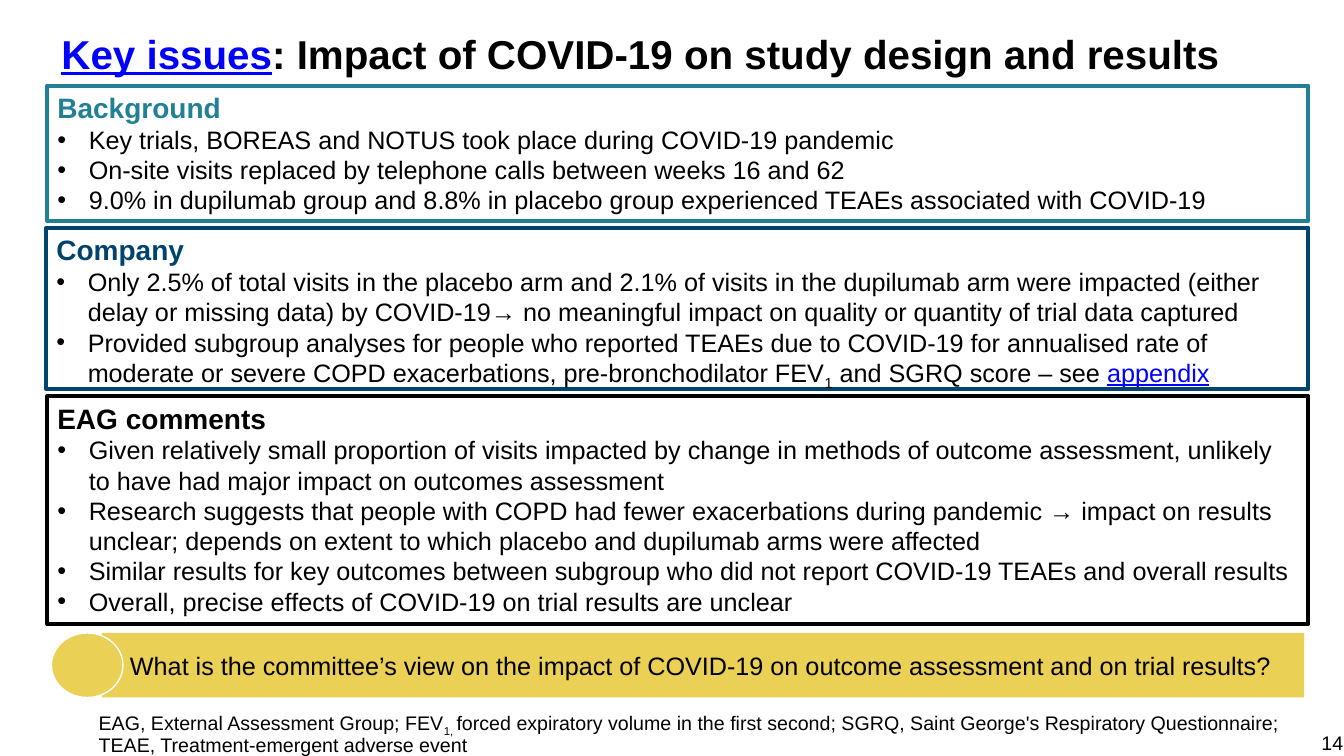
from dataclasses import dataclass

from lxml.etree import SubElement
from pptx import Presentation
from pptx.dml.color import RGBColor
from pptx.enum.shapes import MSO_SHAPE
from pptx.enum.text import MSO_ANCHOR, MSO_AUTO_SIZE, PP_ALIGN
from pptx.oxml.ns import qn
from pptx.shapes.autoshape import Shape
from pptx.slide import Slide
from pptx.text.text import Font, TextFrame, _Paragraph
from pptx.util import Pt

COLORS = {
    "teal": "228096",
    "navy": "00436C",
    "black": "000000",
    "link": "0000FF",
    "yellow": "EAD054",
    "white": "FFFFFF",
}
PANEL_RIGHT = 934.56
BULLET_INDENT = 22.5


@dataclass
class Span:
    text: str
    link: bool = False
    subscript: bool = False


@dataclass
class Panel:
    heading: str
    color: str
    left: float
    top: float
    height: float
    bullets: list[list[Span]]


PANELS = [
    Panel("Background", "teal", 33.84, 61.2, 96.48, [
        [Span("Key trials, BOREAS and NOTUS took place during COVID-19 pandemic")],
        [Span("On-site visits replaced by telephone calls between weeks 16 and 62")],
        [Span("9.0% in dupilumab group and 8.8% in placebo group experienced TEAEs "
              "associated with COVID-19")],
    ]),
    Panel("Company", "navy", 33.12, 162.72, 115.2, [
        [Span("Only 2.5% of total visits in the placebo arm and 2.1% of visits in the "
              "dupilumab arm were impacted (either delay or missing data) by COVID-19→ "
              "no meaningful impact on quality or quantity of trial data captured")],
        [Span("Provided subgroup analyses for people who reported TEAEs due to COVID-19 "
              "for annualised rate of moderate or severe COPD exacerbations, "
              "pre-bronchodilator FEV"),
         Span("1", subscript=True),
         Span(" and SGRQ score – see "),
         Span("appendix", link=True)],
    ]),
    Panel("EAG comments", "black", 33.84, 282.96, 162.72, [
        [Span("Given relatively small proportion of visits impacted by change in methods of "
              "outcome assessment, unlikely to have had major impact on outcomes assessment")],
        [Span("Research suggests that people with COPD had fewer exacerbations during "
              "pandemic → impact on results unclear; depends on extent to which placebo "
              "and dupilumab arms were affected")],
        [Span("Similar results for key outcomes between subgroup who did not report "
              "COVID-19 TEAEs and overall results")],
        [Span("Overall, precise effects of COVID-19 on trial results are unclear")],
    ]),
]


def rgb(name: str) -> RGBColor:
    return RGBColor.from_string(COLORS[name])


def style_font(font: Font, size: float, color: str = "black", bold: bool = False) -> None:
    font.name = "Arial"
    font.size = Pt(size)
    font.bold = bold
    font.color.rgb = rgb(color)


def write(para: _Paragraph, spans: list[Span], size: float, color: str = "black",
          bold: bool = False) -> None:
    style_font(para.font, size, color, bold)
    para.alignment = PP_ALIGN.LEFT
    for span in spans:
        run = para.add_run()
        run.text = span.text
        run.font.color.rgb = rgb("link" if span.link else color)
        if span.link:
            run.font.underline = True
        if span.subscript:
            run.font._element.set("baseline", "-25000")


def add_bullet(para: _Paragraph) -> None:
    properties = para._p.get_or_add_pPr()
    properties.set("marL", str(Pt(BULLET_INDENT)))
    properties.set("indent", str(-Pt(BULLET_INDENT)))
    SubElement(properties, qn("a:buFont"), typeface="Arial")
    SubElement(properties, qn("a:buChar"), char="•")


def add_box(page: Slide, kind: MSO_SHAPE, left: float, top: float, width: float, height: float,
            fill: str | None = None, line: str | None = None, line_width: float = 1) -> Shape:
    box = page.shapes.add_shape(kind, Pt(left), Pt(top), Pt(width), Pt(height))
    box.shadow.inherit = False
    if fill:
        box.fill.solid()
        box.fill.fore_color.rgb = rgb(fill)
    else:
        box.fill.background()
    if line:
        box.line.color.rgb = rgb(line)
        box.line.width = Pt(line_width)
    else:
        box.line.fill.background()
    return box


def add_text(page: Slide, left: float, top: float, width: float, height: float) -> TextFrame:
    frame = page.shapes.add_textbox(Pt(left), Pt(top), Pt(width), Pt(height)).text_frame
    frame.word_wrap = True
    return frame


def add_title(page: Slide) -> None:
    title = page.shapes.title
    title.left, title.top, title.width, title.height = Pt(36.72), Pt(20.88), Pt(885.6), Pt(46.8)
    frame = title.text_frame
    frame.auto_size = MSO_AUTO_SIZE.NONE
    frame.vertical_anchor = MSO_ANCHOR.TOP
    para = frame.paragraphs[0]
    para.line_spacing = 0.9
    write(para, [Span("Key issues", link=True),
                 Span(": Impact of COVID-19 on study design and results")], 28.8, bold=True)


def add_panel(page: Slide, panel: Panel) -> None:
    box = add_box(page, MSO_SHAPE.RECTANGLE, panel.left, panel.top, PANEL_RIGHT - panel.left,
                  panel.height, line=panel.color, line_width=3)
    frame = box.text_frame
    frame.vertical_anchor = MSO_ANCHOR.TOP
    write(frame.paragraphs[0], [Span(panel.heading)], 20, panel.color, bold=True)
    for spans in panel.bullets:
        para = frame.add_paragraph()
        add_bullet(para)
        write(para, spans, 18)


def add_question(page: Slide) -> None:
    top, height = 452.16, 46.08
    bar = add_box(page, MSO_SHAPE.RECTANGLE, 72.72, top, 858.96, height, fill="yellow")
    frame = bar.text_frame
    frame.margin_left = Pt(20.16)
    frame.vertical_anchor = MSO_ANCHOR.MIDDLE
    write(frame.paragraphs[0], [Span("What is the committee’s view on the impact of COVID-19 on "
                                     "outcome assessment and on trial results?")], 18)
    add_box(page, MSO_SHAPE.OVAL, 36.72, top, 51.12, height, fill="yellow", line="white")


def add_footer(page: Slide) -> None:
    para = add_text(page, 63.36, 504.72, 867.6, 35.28).paragraphs[0]
    para.line_spacing = 0.9
    write(para, [
        Span("EAG, External Assessment Group; FEV"),
        Span("1, ", subscript=True),
        Span("forced expiratory volume in the first second; SGRQ, Saint George's Respiratory "
             "Questionnaire; TEAE, Treatment-emergent adverse event"),
    ], 14)
    frame = add_text(page, 929.52, 518.4, 30, 21.6)
    frame.margin_right = 0
    number = frame.paragraphs[0]
    write(number, [Span("14")], 14)
    number.alignment = PP_ALIGN.RIGHT


def main() -> None:
    deck = Presentation()
    deck.slide_width, deck.slide_height = Pt(960), Pt(540)
    page = deck.slides.add_slide(deck.slide_layouts[5])
    add_title(page)
    for panel in PANELS:
        add_panel(page, panel)
    add_question(page)
    add_footer(page)
    deck.save("out.pptx")


if __name__ == "__main__":
    main()
